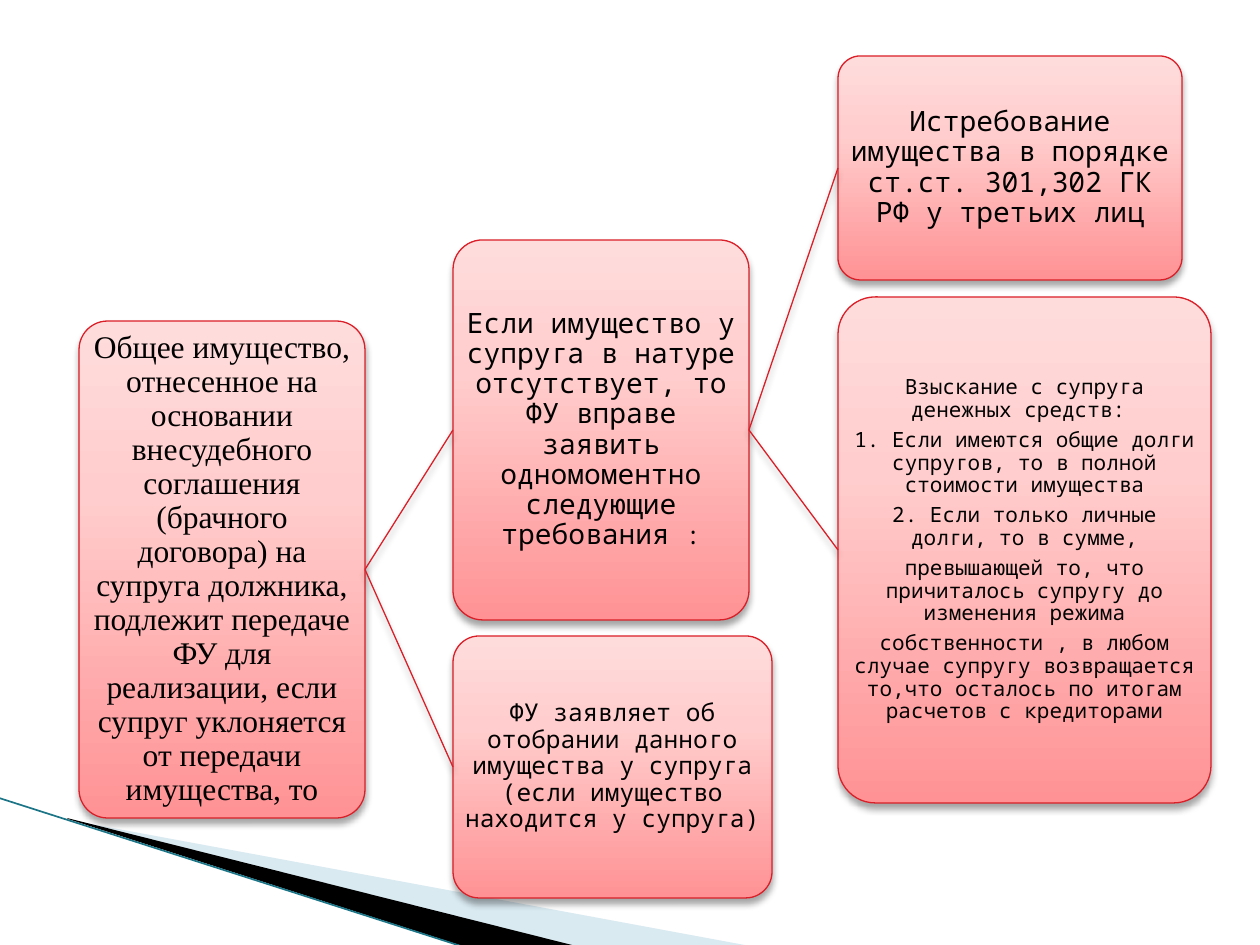
from lxml.etree import SubElement
from pptx import Presentation
from pptx.dml.color import RGBColor
from pptx.enum.shapes import MSO_CONNECTOR, MSO_SHAPE
from pptx.enum.text import MSO_ANCHOR, PP_ALIGN
from pptx.oxml import parse_xml
from pptx.oxml.ns import nsdecls, qn
from pptx.util import Emu, Pt

EMU_PER_PX = 914400 / 126
BLACK = RGBColor(0x00, 0x00, 0x00)
RED = RGBColor(0xDA, 0x1F, 0x28)
PALE_BLUE = RGBColor(0xA0, 0xCB, 0xDC)
TEAL = RGBColor(0x1B, 0x75, 0x87)
GRADIENT = [
    (0, RGBColor(0xFF, 0x92, 0x94)),
    (65, RGBColor(0xFF, 0xCD, 0xCD)),
    (100, RGBColor(0xFF, 0xDC, 0xDC)),
]
SERIF, MONO = "Times New Roman", "Noto Sans Mono"
LEFT_SITE, RIGHT_SITE = 1, 3

# Each node: box (left, top, width, height), font, size, paragraphs
NODES = {
    "transfer": ((79, 321, 286, 497), SERIF, 18, [
        "Общее имущество, отнесенное на основании внесудебного соглашения "
        "(брачного договора) на супруга должника, подлежит передаче ФУ для "
        "реализации, если супруг уклоняется от передачи имущества, то"]),
    "absent": ((453, 240, 296, 380), MONO, 16, [
        "Если имущество у супруга в натуре отсутствует, то ФУ вправе заявить "
        "одномоментно следующие требования "]),
    "reclaim": ((838, 56, 344, 224), MONO, 16, [
        "Истребование имущества в порядке ст.ст. 301,302 ГК РФ у третьих лиц"]),
    "recover": ((838, 297, 373, 506), MONO, 12, [
        "Взыскание с супруга денежных средств: ",
        "1. Если имеются общие долги супругов, то в полной стоимости имущества",
        "2. Если только личные долги, то в сумме,",
        "превышающей то, что причиталось супругу до изменения режима",
        "собственности , в любом случае супругу возвращается то,что осталось "
        "по итогам расчетов с кредиторами"]),
    "seize": ((453, 636, 319, 262), MONO, 14, [
        "ФУ заявляет об отобрании данного имущества у супруга "
        "(если имущество находится у супруга)"]),
}
LINKS = [("transfer", "absent"), ("absent", "reclaim"),
         ("absent", "recover"), ("transfer", "seize")]


def px(n):
    return Emu(round(n * EMU_PER_PX))


def add_shadow(sp):
    sp._element.spPr.append(parse_xml(
        f'<a:effectLst {nsdecls("a")}>'
        f'<a:outerShdw blurRad="{Pt(4)}" dist="{Pt(3)}" dir="5400000" '
        'algn="ctr" rotWithShape="0"><a:srgbClr val="000000">'
        '<a:alpha val="35000"/></a:srgbClr></a:outerShdw></a:effectLst>'))


def fill_gradient(sp):
    stops = "".join(
        f'<a:gs pos="{pos * 1000}"><a:srgbClr val="{color}"/></a:gs>'
        for pos, color in GRADIENT)
    sp.fill.gradient()
    grad = sp._element.spPr.find(qn("a:gradFill"))
    grad.getparent().replace(grad, parse_xml(
        f'<a:gradFill {nsdecls("a")} rotWithShape="1"><a:gsLst>{stops}</a:gsLst>'
        '<a:lin ang="16200000" scaled="0"/></a:gradFill>'))


def add_line(shapes, start, end, color, width):
    line = shapes.add_connector(
        MSO_CONNECTOR.STRAIGHT, *(px(n) for n in start + end))
    line.line.color.rgb = color
    line.line.width = Pt(width)
    return line


def add_wedge(shapes, points, color, alpha=100):
    corners = [(px(x), px(y)) for x, y in points]
    builder = shapes.build_freeform(*corners[0])
    builder.add_line_segments(corners[1:], close=True)
    sp = builder.convert_to_shape()
    sp.shadow.inherit = False
    sp.fill.solid()
    sp.fill.fore_color.rgb = color
    sp.line.fill.background()
    if alpha < 100:
        rgb = sp._element.spPr.find(qn("a:solidFill")).find(qn("a:srgbClr"))
        SubElement(rgb, qn("a:alpha")).set("val", str(alpha * 1000))


def add_corner_decoration(shapes, left, top):
    """Wedges and edge line at the lower left, relative to their tip."""
    def at(*points):
        return [(left + x, top + y) for x, y in points]

    add_wedge(shapes, at((2, 2), (683, 128), (508, 128), (2, 1)), PALE_BLUE, 40)
    add_wedge(shapes, at((0, 0), (509, 128), (402, 130), (1, 1)), BLACK)
    start, end = at((-68, -20), (400, 130))
    edge = add_line(shapes, start, end, TEAL, 0.95)
    SubElement(edge._element.spPr, qn("a:effectLst"))


def add_node(shapes, box, font, size, paragraphs):
    sp = shapes.add_shape(MSO_SHAPE.ROUNDED_RECTANGLE, *(px(n) for n in box))
    sp.adjustments[0] = 0.1
    fill_gradient(sp)
    sp.line.color.rgb = RED
    sp.line.width = Pt(0.75)
    add_shadow(sp)
    tf = sp.text_frame
    tf.word_wrap = True
    tf.vertical_anchor = MSO_ANCHOR.MIDDLE
    tf.margin_left = tf.margin_right = tf.margin_top = tf.margin_bottom = px(1)
    for i, text in enumerate(paragraphs):
        p = tf.add_paragraph() if i else tf.paragraphs[0]
        p.add_run().text = text
        p.alignment = PP_ALIGN.CENTER
        p.line_spacing = 0.9
        p.space_after = Pt(size * 0.35)
        p.font.name = font
        p.font.size = Pt(size)
        p.font.color.rgb = BLACK
    return sp


def add_link(shapes, parent, child):
    link = add_line(shapes, (0, 0), (1, 1), RED, 0.75)
    link.begin_connect(parent, RIGHT_SITE)
    link.end_connect(child, LEFT_SITE)
    add_shadow(link)


def add_tree(shapes):
    nodes = {name: add_node(shapes, *node) for name, node in NODES.items()}
    # The colon closing the claims heading is smaller than the rest
    r = nodes["absent"].text_frame.paragraphs[0].add_run()
    r.text = ":"
    r.font.size = Pt(14)
    for parent, child in LINKS:
        add_link(shapes, nodes[parent], nodes[child])


def main():
    prs = Presentation()
    prs.slide_width, prs.slide_height = px(1260), px(945)
    shapes = prs.slides.add_slide(prs.slide_layouts[6]).shapes
    add_corner_decoration(shapes, 67, 818)
    add_tree(shapes)
    prs.save("out.pptx")


if __name__ == "__main__":
    main()
